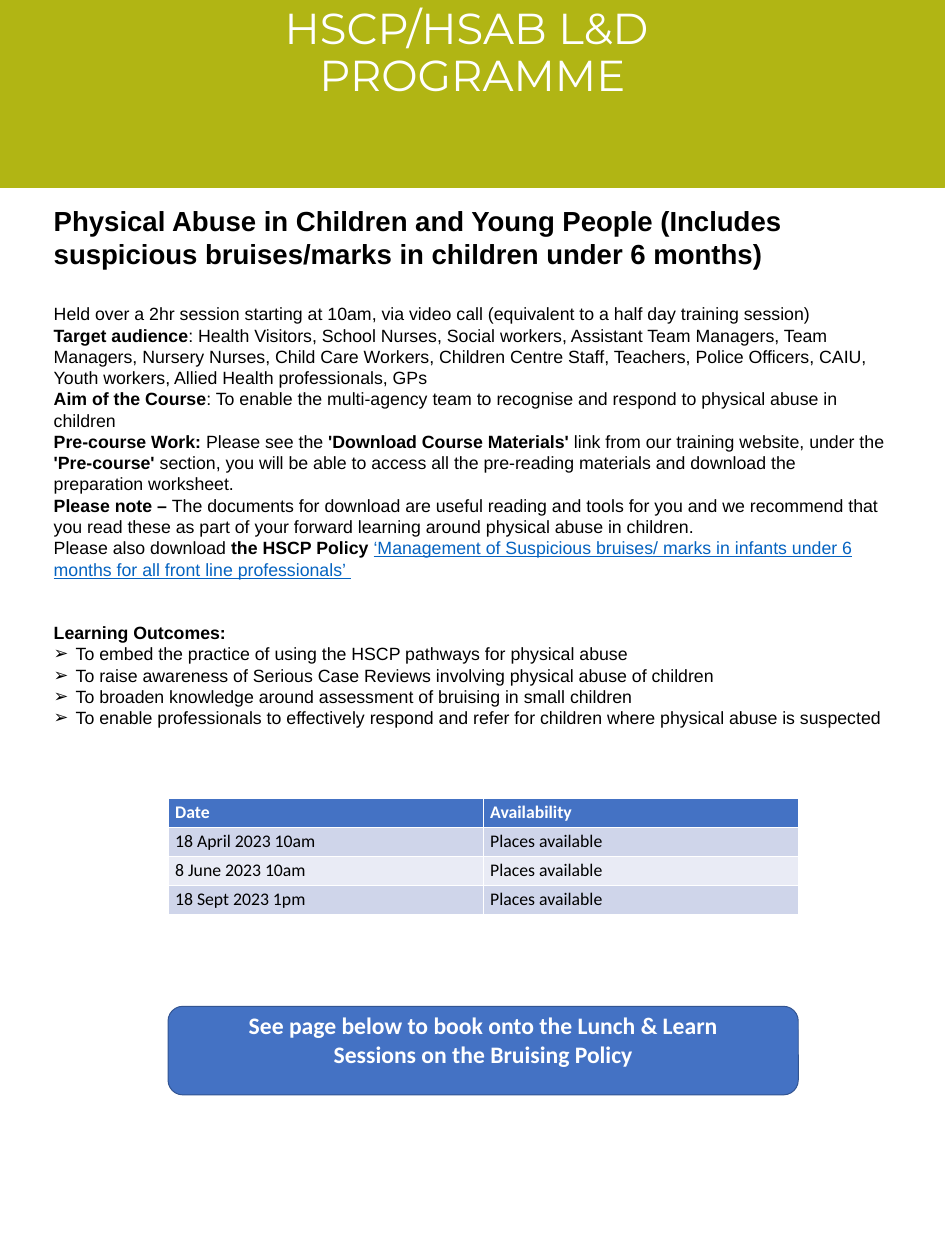
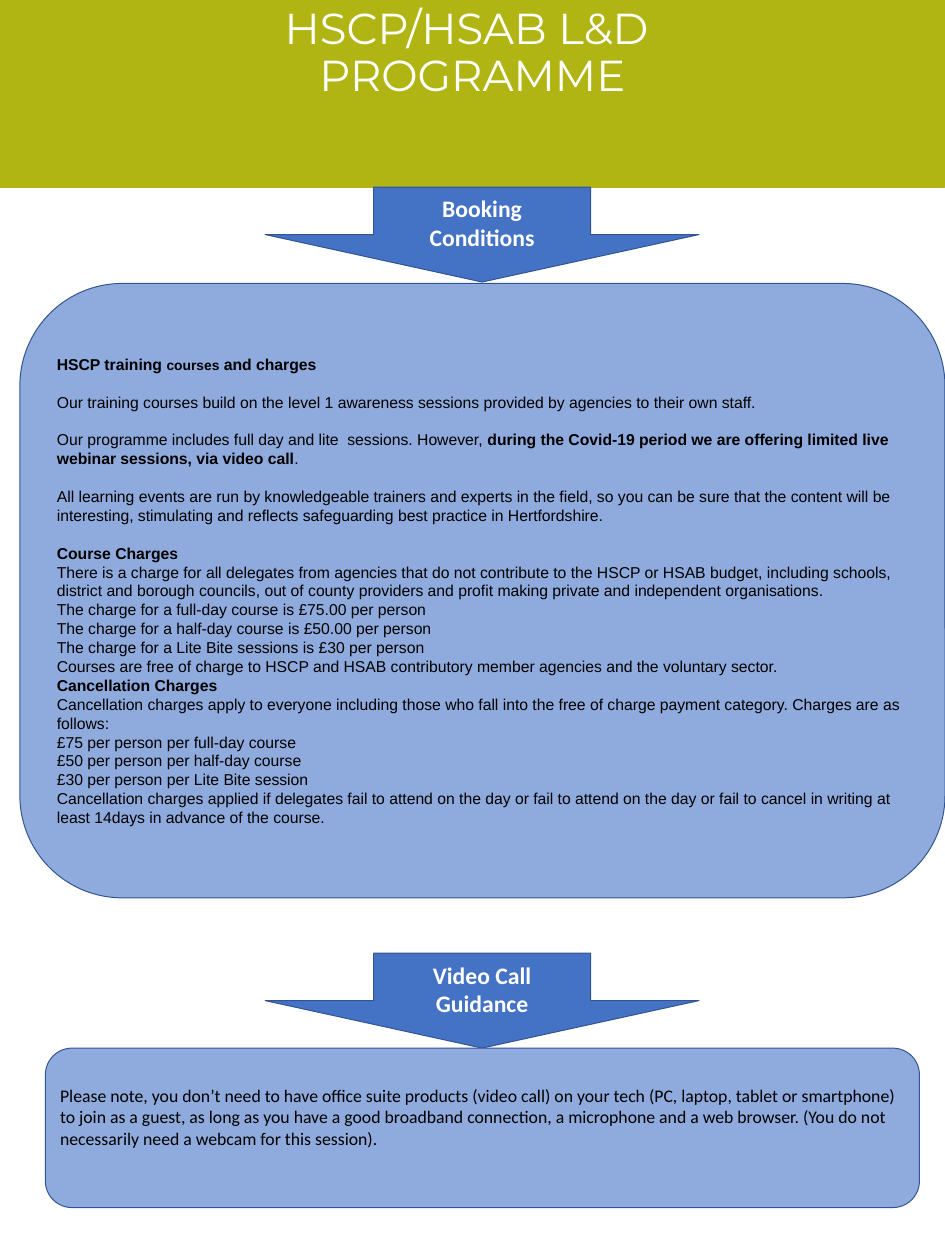
"""Build the two-page training programme flyer."""
from lxml import etree
from pptx import Presentation
from pptx.dml.color import RGBColor
from pptx.enum.shapes import MSO_SHAPE as Preset
from pptx.enum.text import MSO_ANCHOR as Anchor, MSO_AUTO_SIZE as AutoSize, PP_ALIGN as Align
from pptx.oxml.ns import qn
from pptx.util import Inches, Pt

PAGE_W, PAGE_H = 13.33, 17.78
WHITE, BLACK = "FFFFFF", "000000"
LIME, BLUE, PALE_BLUE, OUTLINE, LINK_BLUE = "B1B514", "4472C4", "8FAADC", "325491", "0563C1"
ROW_FILLS = ("CFD5EA", "E9EBF5")
BULLET, BULLET_INDENT = "➢", 0.31
TITLE = "HSCP/HSAB L&D \vPROGRAMME"

COURSE_HEADING = ("Physical Abuse in Children and Young People "
                  "(Includes suspicious bruises/marks in children under 6 months)")
COURSE_DETAILS = [
    [("Held over a 2hr session starting at 10am, via video call (equivalent to a half day training session)", "")],
    [("Target audience", "bold"),
     (": Health Visitors, School Nurses, Social workers, Assistant Team Managers, Team Managers, "
      "Nursery Nurses, Child Care Workers, Children Centre Staff, Teachers, Police Officers, CAIU, "
      "Youth workers, Allied Health professionals, GPs", "")],
    [("Aim of the Course", "bold"),
     (": To enable the multi-agency team to recognise and respond to physical abuse in children", "")],
    [("Pre-course Work: ", "bold"), ("Please see the ", ""), ("'Download Course Materials'", "bold"),
     (" link from our training website, under the ", ""), ("'Pre-course'", "bold"),
     (" section, you will be able to access all the pre-reading materials and "
      "download the preparation worksheet.", "")],
    [("Please note – ", "bold"),
     ("The documents for download are useful reading and tools for you and we recommend that "
      "you read these as part of your forward learning around physical abuse in children.", "")],
    [("Please also download ", ""), ("the HSCP Policy ", "bold"),
     ("‘Management of Suspicious bruises/ marks in infants under 6 months "
      "for all front line professionals’ ", "link")],
]
OUTCOMES_HEADING = "Learning Outcomes:"
OUTCOMES = [
    "To embed the practice of using the HSCP pathways for physical abuse",
    "To raise awareness of Serious Case Reviews involving physical abuse of children",
    "To broaden knowledge around assessment of bruising in small children",
    "To enable professionals to effectively respond and refer for children where physical abuse is suspected",
]
SESSIONS = [
    ("Date", "Availability"),
    ("18 April 2023 10am", "Places available"),
    ("8 June 2023 10am", "Places available"),
    ("18 Sept 2023 1pm", "Places available"),
]
BOOKING_CALL = ["See page below to book onto the Lunch & Learn", "Sessions on the Bruising Policy"]

ARROWS = [(2.64, ["Booking", "Conditions"]), (13.45, ["Video Call", "Guidance"])]
SPACED_CONDITIONS = [
    [("Our training courses build on the level 1 awareness sessions provided by agencies to their own staff.", "")],
    [("Our programme includes full day and lite  sessions. However, ", ""),
     ("during the Covid-19 period we are offering limited live webinar sessions, via video call", "bold"), (".", "")],
    [("All learning events are run by knowledgeable trainers and experts in the field, so you can be sure "
      "that the content will be interesting, stimulating and reflects safeguarding best practice in "
      "Hertfordshire.", "")],
    [("Course Charges", "bold")],
]
CONDITIONS_HEADING = [("HSCP training ", "bold"), ("courses", "small"), (" and charges", "bold")]
CHARGES = [
    [("There is a charge for all delegates from agencies that do not contribute to the HSCP or HSAB budget, "
      "including schools, district and borough councils, out of county providers and profit making private "
      "and independent organisations.", "")],
    [("The charge for a full-day course is £75.00 per person", "")],
    [("The charge for a half-day course is £50.00 per person", "")],
    [("The charge for a Lite Bite sessions is £30 per person", "")],
    [("Courses are free of charge to HSCP and HSAB contributory member agencies and the voluntary sector.", "")],
    [("Cancellation Charges", "bold")],
    [("Cancellation charges apply to everyone including those who fall into the free of charge payment "
      "category. Charges are as follows:", "")],
    [("£75 per person per full-day course", "")],
    [("£50 per person per half-day course", "")],
    [("£30 per person per Lite Bite session", "")],
    [("Cancellation charges applied if delegates fail to attend on the day or fail to attend on the day or "
      "fail to cancel in writing at least 14days in advance of the course.", "")],
]
GUIDANCE = ("Please note, you don’t need to have office suite products (video call) on your tech (PC, laptop, tablet "
            "or smartphone) to join as a guest, as long as you have a good broadband connection, a microphone "
            "and a web browser. (You do not necessarily need a webcam for this session).")


def rgb(value):
    return RGBColor.from_string(value)


def inches(*lengths):
    return [Inches(length) for length in lengths]


def set_font(font, name, size, color, bold=None):
    font.name, font.size, font.bold = name, Pt(size), bold
    font.color.rgb = rgb(color)


def write(frame, runs, name, size, color, align=Align.LEFT, before=0, bullet=False):
    """Fill the empty first paragraph, or append one, with styled runs."""
    para = frame.paragraphs[0]
    if para.runs:
        para = frame.add_paragraph()
    para.alignment = align
    if before:
        para.space_before = Pt(before)
    if bullet:
        props = para._p.get_or_add_pPr()
        props.set("marL", str(Inches(BULLET_INDENT)))
        props.set("indent", str(-Inches(BULLET_INDENT)))
        etree.SubElement(props, qn("a:buFont")).set("typeface", name)
        etree.SubElement(props, qn("a:buChar")).set("char", BULLET)
    all_bold = all(style in ("bold", "small") for _, style in runs)
    set_font(para.font, name, size, color, all_bold)
    for text, style in runs:
        run = para.add_run()
        run.text = text
        if style == "bold" and not all_bold:
            run.font.bold = True
        elif style == "small":
            run.font.size = Pt(size - 2)
        elif style == "link":
            run.font.underline = True
            run.font.color.rgb = rgb(LINK_BLUE)


def add_box(slide, preset, box, fill, line, bottom_inset=0.05):
    shape = slide.shapes.add_shape(preset, *inches(*box))
    shape.shadow.inherit = False
    shape.fill.solid()
    shape.fill.fore_color.rgb = rgb(fill)
    shape.line.color.rgb = rgb(line)
    shape.line.width = Pt(1)
    shape.text_frame.word_wrap = True
    shape.text_frame.vertical_anchor = Anchor.MIDDLE
    shape.text_frame.margin_bottom = Inches(bottom_inset)
    return shape


def add_label(slide, preset, box, lines, bottom_inset=0.05):
    frame = add_box(slide, preset, box, BLUE, OUTLINE, bottom_inset).text_frame
    for line in lines:
        write(frame, [(line, "bold")], "Calibri", 24, WHITE, Align.CENTER)


def add_page(deck):
    """Add a slide with the lime band behind its title."""
    slide = deck.slides.add_slide(deck.slide_layouts[5])
    band = add_box(slide, Preset.RECTANGLE, (0, 0, PAGE_W, 2.64), LIME, LIME)
    title = slide.shapes.title
    title._element.addprevious(band._element)
    title.left, title.top, title.width, title.height = inches(0, 0.05, PAGE_W, 2.26)
    frame = title.text_frame
    frame.text = TITLE
    frame.auto_size = AutoSize.NONE
    frame.vertical_anchor = Anchor.TOP
    heading = frame.paragraphs[0]
    heading.alignment = Align.CENTER
    heading.line_spacing = 0.9
    set_font(heading.font, "Montserrat", 44, WHITE)
    return slide


def add_sessions(slide, left, top, width, row_h):
    table = slide.shapes.add_table(len(SESSIONS), 2, *inches(left, top, width, row_h * len(SESSIONS))).table
    for r, session in enumerate(SESSIONS):
        table.rows[r].height = Inches(row_h)
        for c, text in enumerate(session):
            cell = table.cell(r, c)
            cell.fill.solid()
            cell.fill.fore_color.rgb = rgb(ROW_FILLS[(r - 1) % 2] if r else BLUE)
            write(cell.text_frame, [(text, "" if r else "bold")], "Calibri", 18, BLACK if r else WHITE)


def build_course(deck):
    slide = add_page(deck)
    frame = slide.shapes.add_textbox(*inches(0.66, 2.83, 11.97, 7.81)).text_frame
    frame.word_wrap = True
    write(frame, [(COURSE_HEADING, "bold")], "Arial", 28, BLACK)
    for i, runs in enumerate(COURSE_DETAILS):
        write(frame, runs, "Arial", 18, BLACK, before=0 if i else 33.5)
    write(frame, [(OUTCOMES_HEADING, "bold")], "Arial", 18, BLACK, before=43)
    for outcome in OUTCOMES:
        write(frame, [(outcome, "")], "Arial", 18, BLACK, bullet=True)
    add_sessions(slide, 2.37, 11.26, 8.89, 0.41)
    add_label(slide, Preset.ROUNDED_RECTANGLE, (2.37, 14.2, 8.89, 1.25), BOOKING_CALL, 0.36)


def build_booking(deck):
    slide = add_page(deck)
    for top, lines in ARROWS:
        add_label(slide, Preset.DOWN_ARROW, (3.74, top, 6.12, 1.34), lines)
    conditions = add_box(slide, Preset.ROUNDED_RECTANGLE, (0.28, 4, 13.05, 8.67), PALE_BLUE, OUTLINE).text_frame
    write(conditions, CONDITIONS_HEADING, "Arial", 16, BLACK)
    for runs in SPACED_CONDITIONS:
        write(conditions, runs, "Arial", 16, BLACK, before=19.2)
    for runs in CHARGES:
        write(conditions, runs, "Arial", 16, BLACK)
    guidance = add_box(slide, Preset.ROUNDED_RECTANGLE, (0.64, 14.79, 12.33, 2.25), PALE_BLUE, OUTLINE, 0.36)
    write(guidance.text_frame, [(GUIDANCE, "")], "Calibri", 18, BLACK)


def main():
    deck = Presentation()
    deck.slide_width, deck.slide_height = inches(PAGE_W, PAGE_H)
    build_course(deck)
    build_booking(deck)
    deck.save("out.pptx")


if __name__ == "__main__":
    main()
